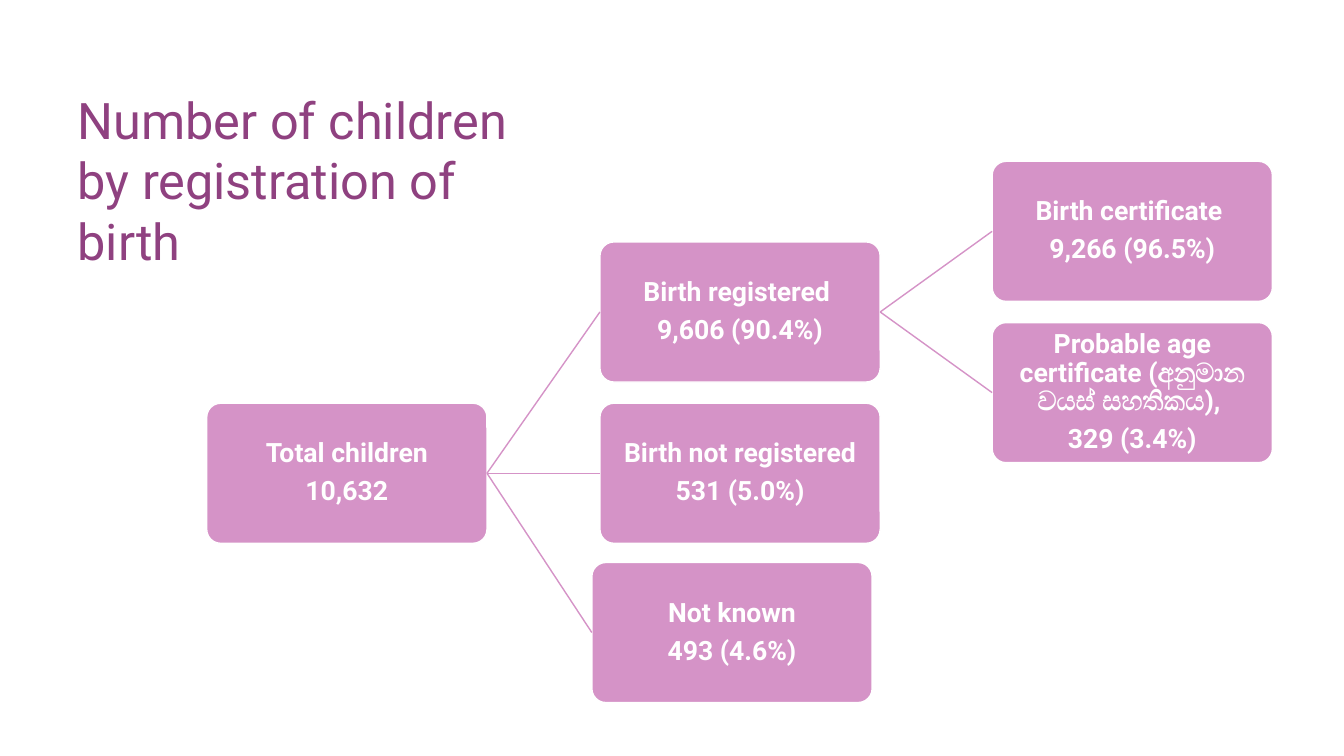
from pptx import Presentation
from pptx.dml.color import RGBColor
from pptx.enum.shapes import MSO_CONNECTOR, MSO_SHAPE
from pptx.enum.text import MSO_ANCHOR, MSO_AUTO_SIZE, PP_ALIGN
from pptx.oxml.ns import qn
from pptx.util import Inches, Pt

ROUNDED = MSO_SHAPE.ROUNDED_RECTANGLE
STRAIGHT = MSO_CONNECTOR.STRAIGHT
TOP, MIDDLE = MSO_ANCHOR.TOP, MSO_ANCHOR.MIDDLE
LEFT, CENTER = PP_ALIGN.LEFT, PP_ALIGN.CENTER
LEFT_SITE, RIGHT_SITE = 1, 3

COLORS = {"heading": "8F4180", "node": "D593C7", "white": "FFFFFF"}
FONT = "Roboto"
HEADING = "Number of children by registration of birth"

NODES = {
    "total": (2.05, 4.0, ["Total children", "10,632"]),
    "registered": (5.95, 2.4, ["Birth registered ", "9,606 (90.4%)"]),
    "certificate": (9.84, 1.6, ["Birth certificate ", "9,266 (96.5%)"]),
    "probable age": (9.84, 3.2, ["Probable age certificate (අනුමාන වයස් සහතිකය), ", "329 (3.4%)"]),
    "not registered": (5.95, 4.0, ["Birth not registered", "531 (5.0%)"]),
    "not known": (5.87, 5.58, ["Not known", "493 (4.6%)"]),
}
BRANCHES = {
    "total": ["registered", "not registered", "not known"],
    "registered": ["certificate", "probable age"],
}
NODE_WIDTH, NODE_HEIGHT = 2.78, 1.39


def rgb(name):
    return RGBColor.from_string(COLORS[name])


def write(frame, lines, size, color, bold=False, align=LEFT, anchor=TOP,
          line_spacing=1.0, space_after=0):
    frame.word_wrap = True
    frame.auto_size = MSO_AUTO_SIZE.NONE
    frame.vertical_anchor = anchor
    for index, line in enumerate(lines):
        paragraph = frame.add_paragraph() if index else frame.paragraphs[0]
        paragraph.alignment = align
        paragraph.line_spacing = line_spacing
        paragraph.space_before = Pt(0)
        paragraph.space_after = Pt(space_after)
        run = paragraph.add_run()
        run.text = line
        run.font.name = FONT
        run.font.size = Pt(size)
        run.font.bold = bold
        run.font.color.rgb = rgb(color)


def add_node(slide, left, top, lines):
    node = slide.shapes.add_shape(ROUNDED, Inches(left), Inches(top),
                                  Inches(NODE_WIDTH), Inches(NODE_HEIGHT))
    node.adjustments[0] = 0.1
    node.shadow.inherit = False
    node.fill.solid()
    node.fill.fore_color.rgb = rgb("node")
    node.line.color.rgb = rgb("white")
    node.line.width = Pt(1)
    frame = node.text_frame
    frame.margin_left = frame.margin_right = Inches(0.01)
    frame.margin_top = frame.margin_bottom = Inches(0.01)
    write(frame, lines, 19, "white", bold=True, align=CENTER, anchor=MIDDLE,
          line_spacing=0.9, space_after=6.65)
    return node


def add_branch(slide, parent, child):
    branch = slide.shapes.add_connector(STRAIGHT, 0, 0, 0, 0)
    branch.begin_connect(parent, RIGHT_SITE)
    branch.end_connect(child, LEFT_SITE)
    branch.line.color.rgb = rgb("node")
    branch.line.width = Pt(1)
    properties = branch._element.spPr
    properties.append(properties.makeelement(qn("a:effectLst"), {}))


def main():
    deck = Presentation()
    deck.slide_width, deck.slide_height = Inches(13.33), Inches(7.5)
    slide = deck.slides.add_slide(deck.slide_layouts[5])

    heading = slide.shapes.title
    heading.left, heading.top = Inches(0.67), Inches(0.83)
    heading.width, heading.height = Inches(4.54), Inches(1.92)
    write(heading.text_frame, [HEADING], 36, "heading")

    nodes = {key: add_node(slide, *node) for key, node in NODES.items()}
    for parent, children in BRANCHES.items():
        for child in children:
            add_branch(slide, nodes[parent], nodes[child])

    deck.save("out.pptx")


if __name__ == "__main__":
    main()
